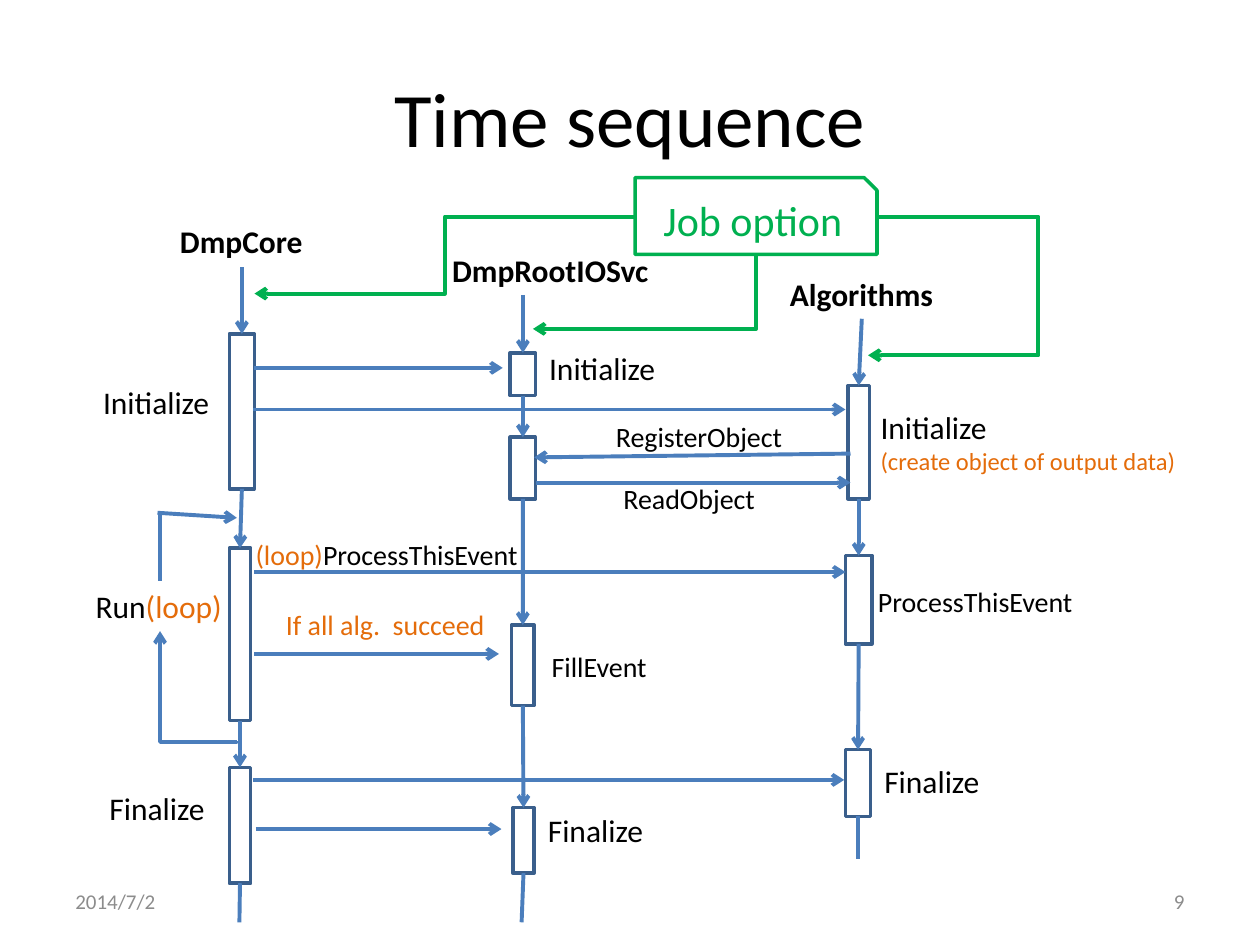
from lxml.etree import SubElement
from pptx import Presentation
from pptx.dml.color import RGBColor
from pptx.enum.shapes import MSO_CONNECTOR as LINK, MSO_SHAPE as SHAPE
from pptx.enum.text import MSO_ANCHOR as ANCHOR, MSO_AUTO_SIZE as FIT, PP_ALIGN as ALIGN
from pptx.oxml.ns import qn
from pptx.util import Inches, Pt

BLACK = RGBColor(0, 0, 0)
GRAY = RGBColor(0x8C, 0x8C, 0x8C)
ORANGE = RGBColor(0xE4, 0x6C, 0x0A)
GREEN = RGBColor(0x00, 0xB0, 0x50)
BLUE = RGBColor(0x4B, 0x7E, 0xBC)
DARK_BLUE = RGBColor(0x3A, 0x5F, 0x8C)
FONT = "Calibri"

LIFELINES = [
    {"name": "DmpCore", "name_at": (1.33, 1.71, 1.22, 0.4),
     "start": (1.92, 2.12), "end": (1.9, 7.32),
     "bars": [(1.82, 2.65, 0.2, 1.23), (1.82, 4.35, 0.17, 1.37), (1.82, 6.09, 0.17, 0.92)]},
    {"name": "DmpRootIOSvc", "name_at": (3.49, 1.94, 1.8, 0.4),
     "start": (4.15, 2.34), "end": (4.14, 7.32),
     "bars": [(4.05, 2.8, 0.2, 0.34), (4.05, 3.47, 0.2, 0.49),
              (4.06, 4.96, 0.18, 0.64), (4.07, 6.41, 0.17, 0.52)]},
    {"name": "Algorithms", "name_at": (6.17, 2.13, 1.38, 0.4),
     "start": (6.84, 2.53), "end": (6.81, 6.82),
     "bars": [(6.73, 3.06, 0.17, 0.9), (6.71, 4.41, 0.21, 0.7), (6.71, 5.95, 0.2, 0.53)]},
]

STEPS = [
    ((0.72, 2.99, 1.06, 0.4), [[("Initialize", BLACK, 18)]]),
    ((0.66, 4.61, 1.22, 0.4), [[("Run", BLACK, 18), ("(loop)", ORANGE, 18)]]),
    ((0.77, 6.21, 0.97, 0.4), [[("Finalize", BLACK, 18)]]),
    ((4.26, 2.72, 1.06, 0.4), [[("Initialize", BLACK, 18)]]),
    ((4.28, 5.11, 0.97, 0.37), [[("FillEvent", BLACK, 16)]]),
    ((4.25, 6.39, 0.97, 0.4), [[("Finalize", BLACK, 18)]]),
    ((6.89, 3.19, 2.56, 0.64), [[("Initialize", BLACK, 18)],
                                [("(create object of output data)", ORANGE, 14)]]),
    ((6.87, 4.59, 1.83, 0.37), [[("ProcessThisEvent", BLACK, 16)]]),
    ((6.92, 6, 0.97, 0.4), [[("Finalize", BLACK, 18)]]),
    ((4.79, 3.28, 1.54, 0.37), [[("RegisterObject", BLACK, 16)]]),
    ((4.85, 3.77, 1.26, 0.37), [[("ReadObject", BLACK, 16)]]),
    ((1.93, 4.22, 2.38, 0.37), [[("(loop)", ORANGE, 16), ("ProcessThisEvent", BLACK, 16)]]),
    ((2.17, 4.77, 1.79, 0.37), [[("If all alg.  succeed", ORANGE, 16)]]),
]

MESSAGES = [
    ((2.02, 2.92), (3.99, 2.92)),
    ((2.01, 3.25), (6.71, 3.25)),
    ((6.75, 3.6), (4.24, 3.63)),
    ((4.25, 3.83), (6.75, 3.83)),
    ((2.02, 4.54), (6.71, 4.54)),
    ((2.02, 5.19), (3.96, 5.19)),
    ((2.01, 6.19), (6.7, 6.19)),
    ((2.03, 6.58), (3.98, 6.58)),
    ((1.25, 4.07), (1.88, 4.11)),
]
LOOP_RISE = ((1.27, 4.61), (1.27, 4.07))

ELBOWS = [
    {"start": (1.14, 5.75), "end": (2.01, 5.14), "color": BLUE,
     "preset": "bentConnector3", "turn": 270, "bends": [-0.01]},
    {"start": (4.82, 1.43), "end": (5.41, 3.2), "color": GREEN,
     "preset": "bentConnector2", "turn": 90, "bends": []},
    {"start": (6.96, 1.72), "end": (6.89, 2.82), "color": GREEN,
     "preset": "bentConnector4", "turn": 0, "bends": [-18.29, 1]},
    {"start": (5.04, 1.72), "end": (2.02, 2.33), "color": GREEN,
     "preset": "bentConnector3", "turn": 0, "bends": [0.5]},
]

JOB_OPTION_AT = (5.04, 1.41, 1.92, 0.61)
FOOTERS = [
    ("2014/7/2", (0.5, 6.95, 2.33, 0.4), ALIGN.LEFT),
    ("9", (7.17, 6.95, 2.33, 0.4), ALIGN.RIGHT),
]


def inches(values):
    return [Inches(value) for value in values]


def write(frame, paragraphs, bold=False, align=ALIGN.LEFT, anchor=ANCHOR.TOP, wrap=False):
    frame.word_wrap = wrap
    frame.auto_size = FIT.NONE if wrap else FIT.SHAPE_TO_FIT_TEXT
    frame.vertical_anchor = anchor
    for index, runs in enumerate(paragraphs):
        paragraph = frame.add_paragraph() if index else frame.paragraphs[0]
        paragraph.alignment = align
        for words, color, size in runs:
            run = paragraph.add_run()
            run.text = words
            run.font.name = FONT
            run.font.size = Pt(size)
            run.font.bold = bold
            run.font.color.rgb = color


def label(slide, at, paragraphs, **style):
    write(slide.shapes.add_textbox(*inches(at)).text_frame, paragraphs, **style)


def outline(slide, kind, at, color):
    shape = slide.shapes.add_shape(kind, *inches(at))
    shape.shadow.inherit = False
    shape.fill.background()
    shape.line.color.rgb = color
    shape.line.width = Pt(2)
    return shape


def link(slide, start, end, color=BLUE, kind=LINK.STRAIGHT, arrow=True):
    line = slide.shapes.add_connector(kind, *inches(start + end))
    line.line.color.rgb = color
    line.line.width = Pt(2.25)
    properties = line._element.spPr
    if arrow:
        SubElement(properties.find(qn("a:ln")), qn("a:tailEnd"), type="arrow")
    SubElement(properties, qn("a:effectLst"))
    return line


def elbow(slide, start, end, color, preset, turn, bends):
    properties = link(slide, start, end, color, LINK.ELBOW)._element.spPr
    if turn:
        properties.find(qn("a:xfrm")).set("rot", str(turn * 60000))
    geometry = properties.find(qn("a:prstGeom"))
    geometry.set("prst", preset)
    guides = geometry.find(qn("a:avLst"))
    for number, bend in enumerate(bends, 1):
        SubElement(guides, qn("a:gd"), name=f"adj{number}", fmla=f"val {round(bend * 100000)}")


def lifeline(slide, name, name_at, start, end, bars):
    label(slide, name_at, [[(name, BLACK, 18)]], bold=True)
    boxes = [outline(slide, SHAPE.RECTANGLE, bar, DARK_BLUE) for bar in bars]
    for above, below in zip([None] + boxes, boxes + [None]):
        line = link(slide, start, end, arrow=below is not None)
        if above:
            line.begin_connect(above, 2)
        if below:
            line.end_connect(below, 0)


def main():
    deck = Presentation()
    deck.slide_width, deck.slide_height = inches((10, 7.5))
    slide = deck.slides.add_slide(deck.slide_layouts[5])

    title = slide.shapes.title
    title.left, title.top, title.width, title.height = inches((0.5, 0.3, 9, 1.25))
    write(title.text_frame, [[("Time sequence", BLACK, 44)]],
          align=ALIGN.CENTER, anchor=ANCHOR.MIDDLE, wrap=True)

    for words, at, align in FOOTERS:
        label(slide, at, [[(words, GRAY, 12)]], align=align, anchor=ANCHOR.MIDDLE, wrap=True)
    for column in LIFELINES:
        lifeline(slide, **column)
    for at, paragraphs in STEPS:
        label(slide, at, paragraphs)

    job_option = outline(slide, SHAPE.SNIP_1_RECTANGLE, JOB_OPTION_AT, GREEN)
    write(job_option.text_frame, [[("Job option", GREEN, 24)]],
          align=ALIGN.CENTER, anchor=ANCHOR.MIDDLE, wrap=True)

    for start, end in MESSAGES:
        link(slide, start, end)
    link(slide, *LOOP_RISE, arrow=False)
    for bend in ELBOWS:
        elbow(slide, **bend)

    deck.save("out.pptx")


if __name__ == "__main__":
    main()
